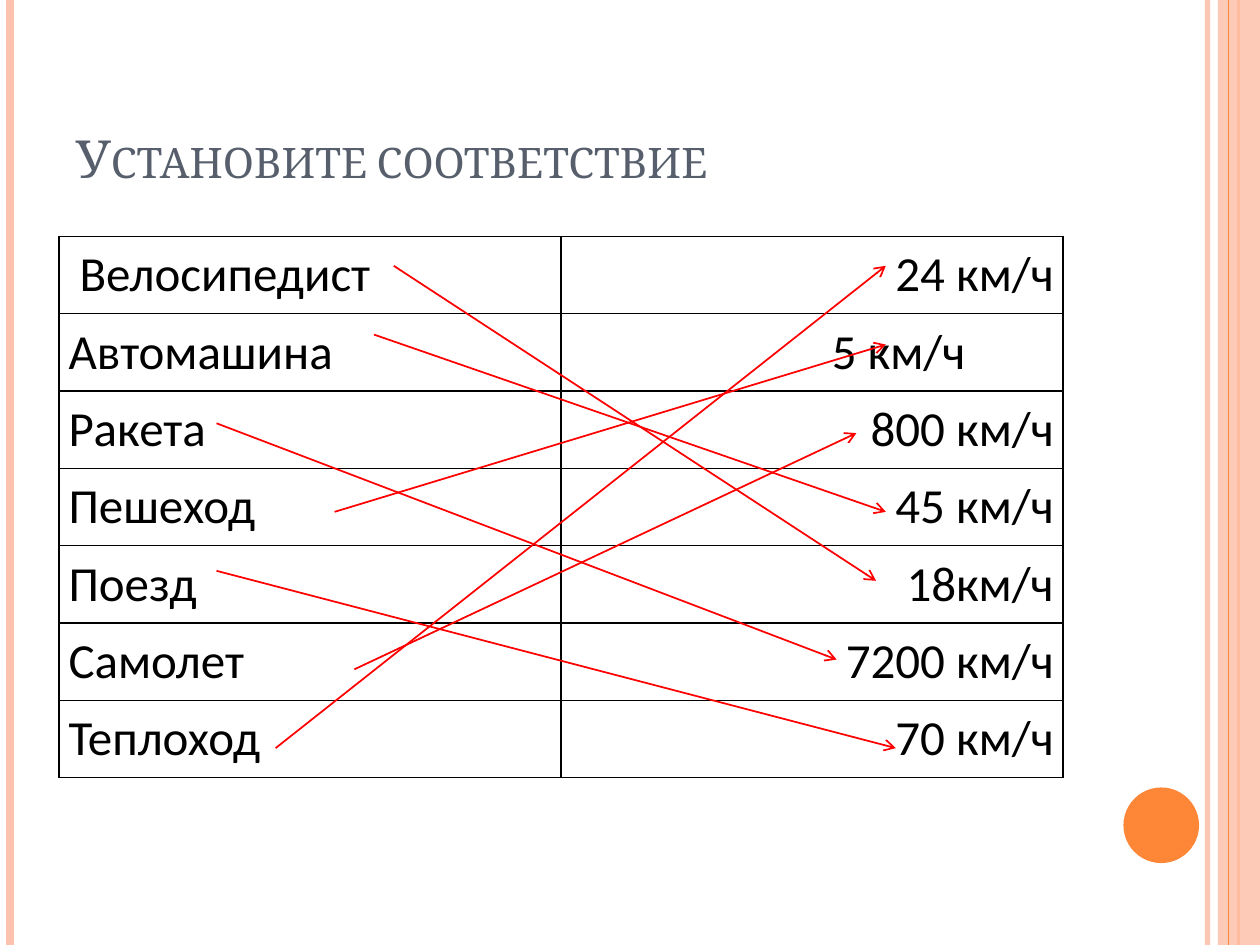
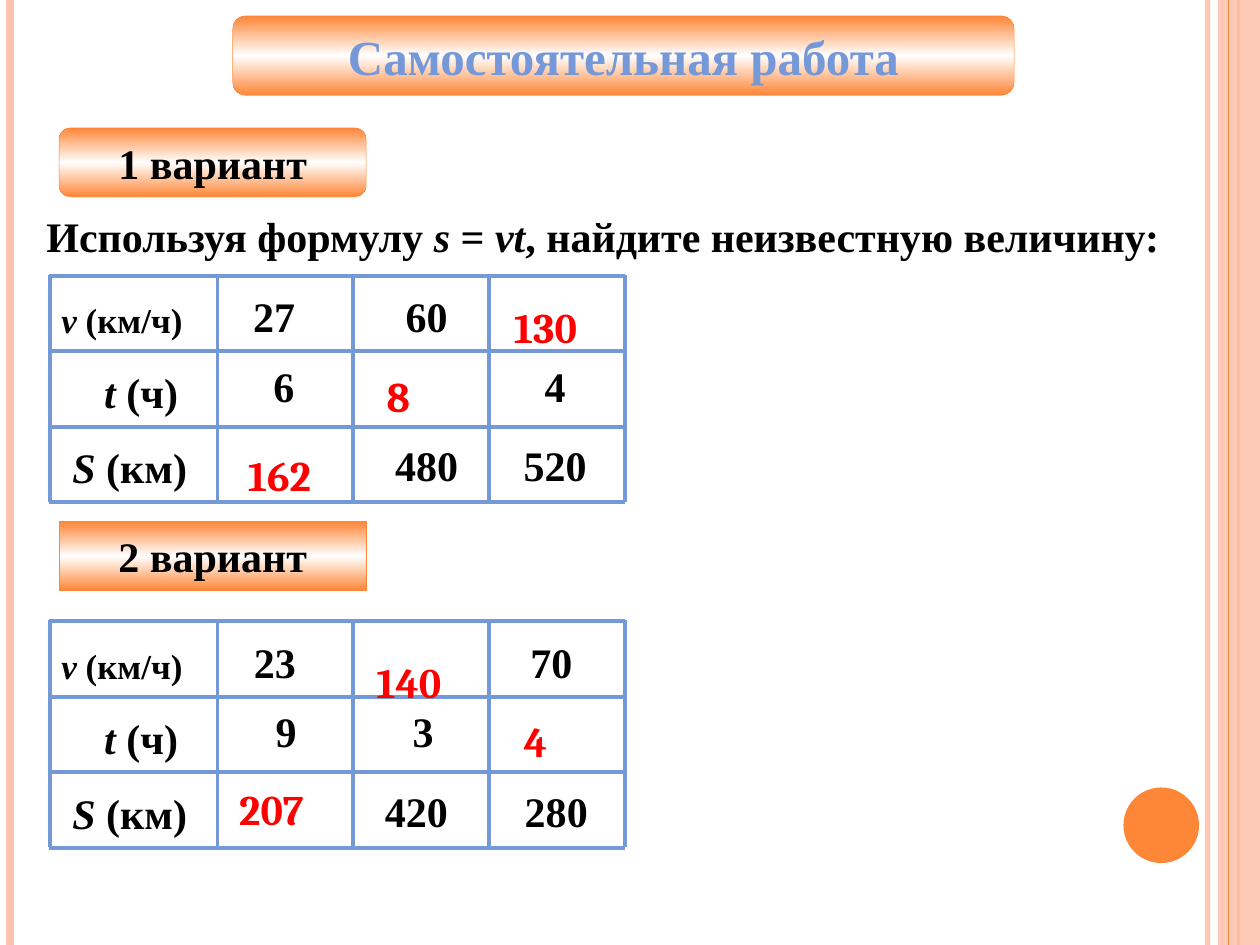
import copy

import lxml.etree
import pptx
import pptx.dml.color
import pptx.enum.shapes
import pptx.enum.text
import pptx.oxml.ns
import pptx.util

Pt = pptx.util.Pt
qn = pptx.oxml.ns.qn
ALIGN = pptx.enum.text.PP_ALIGN
SHAPE = pptx.enum.shapes.MSO_SHAPE

COLORS = {
    "peach": "FEC3AE",
    "orange": "FE8637",
    "white": "FFFFFF",
    "black": "000000",
    "slate": "575F6D",
    "blue": "7598D9",
    "red": "FF0000",
}
PAGE_WIDTH, PAGE_HEIGHT = 720, 540
SERIF = "Times New Roman"

SIDE_LINES = [
    (690, "peach", 3, 93),
    (5.75, "peach", 4.5, 100),
    (707.75, "orange", 1.5, 100),
]
INNER_LINE = (702, "orange", 0.75, 100)

MATCH_TITLE = "Установите соответствие"
MATCH_ROWS = [
    ("Велосипедист", "24 км/ч"),
    ("Автомашина", "5 км/ч"),
    ("Ракета", "800 км/ч"),
    ("Пешеход", "45 км/ч"),
    ("Поезд", "18км/ч"),
    ("Самолет", "7200 км/ч"),
    ("Теплоход", "70 км/ч"),
]
CELL_MARGIN = 5.4
EXTRA_INDENT = {"Велосипедист": 6.3, "5 км/ч": 50.5}
MATCH_ARROWS = [
    ((225, 151.9), (500.6, 331.9)),
    ((191.2, 292.5), (506.2, 196.9)),
    ((202.5, 382.5), (489.4, 247.5)),
    ((123.75, 241.9), (478.1, 376.9)),
    ((213.75, 191.2), (506.2, 292.5)),
    ((157.5, 427.5), (506.2, 151.9)),
    ((123.75, 326.2), (511.9, 427.5)),
]

BUTTONS = [
    ("Самостоятельная работа", (133, 9, 446.5, 45.5), 28, "blue", 0.167),
    ("1 вариант", (33.75, 73.1, 175.5, 39.4), 24, "black", 0.167),
    ("2 вариант", (33.75, 298.1, 175.5, 39.4), 24, "black", 0),
]
TASK = [
    ("Используя формулу ", False),
    ("s ", True),
    ("= ", False),
    ("vt", True),
    (", найдите неизвестную величину:", False),
]
GRID_LEFT, LABEL_WIDTH, VALUE_WIDTH, ROW_HEIGHT = 28.5, 95.8, 77.6, 43.2
GRID_LABELS = [
    ("v", " (км/ч)", (28, 9.5, 97, 31), 20),
    ("t", " (ч)", (52.5, 48.6, 61, 36), 24),
    ("S", " (км)", (34.3, 91.5, 91.5, 36), 24),
]
VALUE_TOPS = (5.2, 44.8, 90.2)
VARIANTS = [
    {
        "top": 157.5,
        "values": [
            [("27", 137.5, 42.5, ALIGN.LEFT), ("60", 204.5, 78.5, ALIGN.CENTER)],
            [("6", 123, 78.5, ALIGN.CENTER), ("4", 278, 78.5, ALIGN.CENTER)],
            [("480", 204.5, 78.5, ALIGN.CENTER), ("520", 278, 78.5, ALIGN.CENTER)],
        ],
        "answers": [("162", 134.6, 253.4), ("8", 213.8, 208.1), ("130", 286.6, 168.5)],
    },
    {
        "top": 355,
        "values": [
            [("23", 138, 42.5, ALIGN.LEFT), ("70", 296, 42.5, ALIGN.LEFT)],
            [("9", 126.7, 73.5, ALIGN.CENTER), ("3", 205, 73.5, ALIGN.CENTER)],
            [("420", 198.7, 78.5, ALIGN.CENTER), ("280", 278.6, 78.5, ALIGN.CENTER)],
        ],
        "answers": [("207", 129.6, 444.2), ("140", 208, 371.5), ("4", 292.3, 405.4)],
    },
]


def rgb(name):
    return pptx.dml.color.RGBColor.from_string(COLORS[name])


def points(lengths):
    return [Pt(length) for length in lengths]


def set_opacity(shape, percent):
    if percent < 100:
        color = shape._element.spPr.find(".//" + qn("a:srgbClr"))
        lxml.etree.SubElement(color, qn("a:alpha"), val=str(percent * 1000))


def style_font(para, size, name, color, bold=False):
    para.font.size = Pt(size)
    para.font.name = name
    para.font.bold = bold
    para.font.color.rgb = rgb(color)


def add_line(shapes, start, end, color, width, arrow=False):
    line = shapes.add_connector(
        pptx.enum.shapes.MSO_CONNECTOR.STRAIGHT, *points(start + end)
    )
    line.line.color.rgb = rgb(color)
    line.line.width = Pt(width)
    properties = line._element.spPr
    if arrow:
        lxml.etree.SubElement(properties.find(qn("a:ln")), qn("a:tailEnd"), type="arrow")
    lxml.etree.SubElement(properties, qn("a:effectLst"))
    return line


def add_text(shapes, spans, frame, size, name=SERIF, color="black", align=ALIGN.LEFT):
    box = shapes.add_textbox(*points(frame))
    box.text_frame.word_wrap = True
    box.text_frame.auto_size = pptx.enum.text.MSO_AUTO_SIZE.SHAPE_TO_FIT_TEXT
    para = box.text_frame.paragraphs[0]
    para.alignment = align
    style_font(para, size, name, color, bold=True)
    for text, italic in spans:
        span = para.add_run()
        span.text = text
        if italic:
            span.font.italic = True


def add_plain_shape(page, kind, frame, color):
    shape = page.shapes.add_shape(kind, *points(frame))
    shape.shadow.inherit = False
    shape.fill.solid()
    shape.fill.fore_color.rgb = rgb(color)
    shape.line.fill.background()
    return shape


def add_side_line(page, x, color, width, opacity):
    line = add_line(page.shapes, (x, 0), (x, PAGE_HEIGHT), color, width)
    set_opacity(line, opacity)


def add_page(deck, layout):
    page = deck.slides.add_slide(deck.slide_layouts.get_by_name(layout))
    page.background.fill.solid()
    page.background.fill.fore_color.rgb = rgb("white")
    for side_line in SIDE_LINES:
        add_side_line(page, *side_line)
    band = add_plain_shape(page, SHAPE.RECTANGLE, (696, 0, 24, PAGE_HEIGHT), "peach")
    set_opacity(band, 87)
    add_side_line(page, *INNER_LINE)
    add_plain_shape(page, SHAPE.OVAL, (642, 450, 43.2, 43.2), "orange")
    return page


def add_button(page, text, frame, size, color, rounding):
    button = page.shapes.add_shape(SHAPE.ROUNDED_RECTANGLE, *points(frame))
    button.adjustments[0] = rounding
    button.shadow.inherit = False
    button.fill.gradient()
    button.fill.gradient_angle = 90
    stops = button._element.spPr.find(".//" + qn("a:gsLst"))
    stops.append(copy.deepcopy(stops[0]))
    for index, stop_color in enumerate(("orange", "white", "orange")):
        stop = button.fill.gradient_stops[index]
        stop.position = index / 2
        stop.color.rgb = rgb(stop_color)
    button.line.color.rgb = rgb("orange")
    button.line.width = Pt(0.25)
    button.text_frame.text = text
    para = button.text_frame.paragraphs[0]
    para.alignment = ALIGN.CENTER
    style_font(para, size, SERIF, color, bold=True)


def add_borders(cell):
    properties = cell._tc.get_or_add_tcPr()
    for side in ("a:lnL", "a:lnR", "a:lnT", "a:lnB"):
        border = lxml.etree.SubElement(properties, qn(side), w=str(Pt(1)))
        fill = lxml.etree.SubElement(border, qn("a:solidFill"))
        lxml.etree.SubElement(fill, qn("a:srgbClr"), val=COLORS["black"])


def fill_cell(cell, text, align):
    extra = EXTRA_INDENT.get(text, 0)
    on_right = align == ALIGN.RIGHT
    cell.margin_left = Pt(CELL_MARGIN + (0 if on_right else extra))
    cell.margin_right = Pt(CELL_MARGIN + (extra if on_right else 0))
    cell.margin_top = cell.margin_bottom = 0
    add_borders(cell)
    cell.fill.background()
    cell.text = text
    para = cell.text_frame.paragraphs[0]
    para.alignment = align
    para.line_spacing = 1.15
    style_font(para, 28, "Calibri", "black")


def build_match_page(deck):
    page = add_page(deck, "Title Only")
    title = page.shapes.title
    title.left, title.top, title.width, title.height = points((36, 21.6, 588, 90))
    title.text_frame.text = MATCH_TITLE
    title.text_frame.vertical_anchor = pptx.enum.text.MSO_ANCHOR.BOTTOM
    para = title.text_frame.paragraphs[0]
    para.alignment = ALIGN.LEFT
    style_font(para, 30, "Cambria", "slate")
    para.runs[0]._r.get_or_add_rPr().set("cap", "small")

    table = page.shapes.add_table(
        len(MATCH_ROWS), 2, *points((33.75, 135, 573.75, 309.4))
    ).table
    table.first_row = table.horz_banding = False
    for row, (mover, speed) in enumerate(MATCH_ROWS):
        fill_cell(table.cell(row, 0), mover, ALIGN.LEFT)
        fill_cell(table.cell(row, 1), speed, ALIGN.RIGHT)
    for start, end in MATCH_ARROWS:
        add_line(page.shapes, start, end, "red", 1, arrow=True)


def add_grid(page, top, values):
    shapes = page.shapes.add_group_shape().shapes
    first_value = GRID_LEFT + LABEL_WIDTH
    columns = [GRID_LEFT] + [first_value + VALUE_WIDTH * step for step in range(4)]
    bottom = top + 3 * ROW_HEIGHT
    for x in columns:
        add_line(shapes, (x, top - 0.5), (x, bottom - 0.5), "blue", 2.25)
    for step in range(4):
        y = top + step * ROW_HEIGHT
        add_line(shapes, (GRID_LEFT - 0.5, y), (columns[-1], y), "blue", 2.25)
    for symbol, unit, (left, offset, width, height), size in GRID_LABELS:
        frame = (left, top + offset, width, height)
        add_text(shapes, [(symbol, True), (unit, False)], frame, size)
    for offset, row in zip(VALUE_TOPS, values):
        for text, left, width, align in row:
            frame = (left, top + offset, width, 36)
            add_text(shapes, [(text, False)], frame, 24, align=align)


def build_work_page(deck):
    page = add_page(deck, "Blank")
    for button in BUTTONS:
        add_button(page, *button)
    add_text(page.shapes, TASK, (19.5, 116.6, 700.5, 36), 24)
    for variant in VARIANTS:
        add_grid(page, variant["top"], variant["values"])
    for variant in VARIANTS:
        for text, left, top in variant["answers"]:
            frame = (left, top, 62, 36)
            add_text(page.shapes, [(text, False)], frame, 24, "Cambria", "red")


def main():
    deck = pptx.Presentation()
    deck.slide_width, deck.slide_height = points((PAGE_WIDTH, PAGE_HEIGHT))
    build_match_page(deck)
    build_work_page(deck)
    deck.save("out.pptx")


if __name__ == "__main__":
    main()
